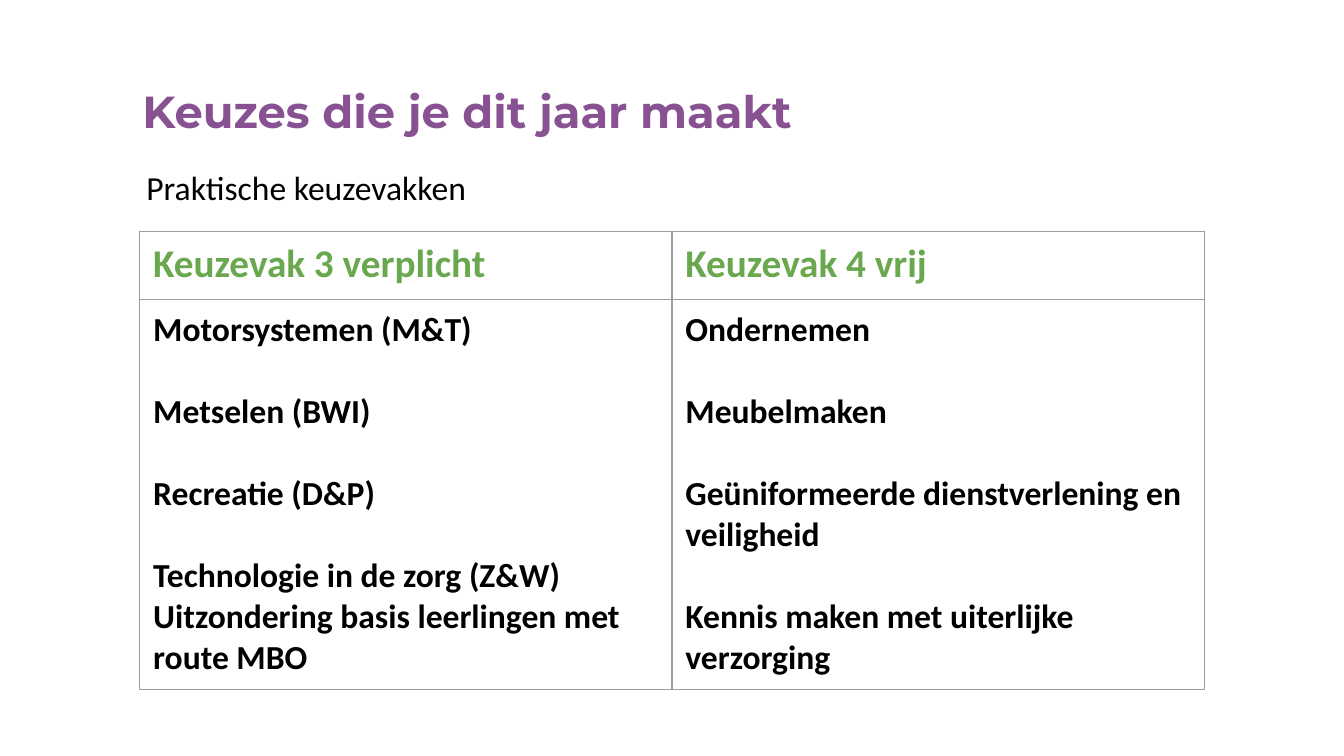
from dataclasses import dataclass

import lxml.etree
import pptx
import pptx.dml.color
import pptx.enum.text
import pptx.oxml.ns
import pptx.util

SLIDE_WIDTH = pptx.util.Inches(10)
SLIDE_HEIGHT = pptx.util.Emu(SLIDE_WIDTH * 9 // 16)
BLANK_LINE = 22


@dataclass(frozen=True)
class Style:
    font: str
    size: float
    color: str
    bold: bool = False


@dataclass(frozen=True)
class Line:
    text: str
    space_before: float = 0


@dataclass(frozen=True)
class Subject:
    heading: str
    options: tuple[Line, ...]


TITLE = Style("Montserrat", 24, "885292", True)
INTRO = Style("Calibri", 18, "000000")
HEADING = Style("Calibri", 21, "6AA84F", True)
OPTION = Style("Calibri", 18, "000000", True)

SUBJECTS = (
    Subject("Keuzevak 3 verplicht", (
        Line("Motorsystemen (M&T)"),
        Line("Metselen (BWI)", BLANK_LINE),
        Line("Recreatie (D&P)", BLANK_LINE),
        Line("Technologie in de zorg (Z&W)", BLANK_LINE),
        Line("Uitzondering basis leerlingen met route MBO"),
    )),
    Subject("Keuzevak 4 vrij", (
        Line("Ondernemen"),
        Line("Meubelmaken", BLANK_LINE),
        Line("Geüniformeerde dienstverlening en veiligheid", BLANK_LINE),
        Line("Kennis maken met uiterlijke verzorging", BLANK_LINE),
    )),
)


def rgb(color: str) -> pptx.dml.color.RGBColor:
    return pptx.dml.color.RGBColor.from_string(color)


def write(frame, lines: tuple[Line, ...], style: Style) -> None:
    frame.text = "\n".join(line.text for line in lines)
    for paragraph, line in zip(frame.paragraphs, lines):
        paragraph.alignment = pptx.enum.text.PP_ALIGN.LEFT
        paragraph.space_before = pptx.util.Pt(line.space_before)
        for run in paragraph.runs:
            run.font.name = style.font
            run.font.size = pptx.util.Pt(style.size)
            run.font.bold = style.bold
            run.font.color.rgb = rgb(style.color)


def place(box, left: float, top: float, width: float, height: float) -> None:
    box.left, box.width = (int(SLIDE_WIDTH * share) for share in (left, width))
    box.top, box.height = (int(SLIDE_HEIGHT * share) for share in (top, height))


def write_box(box, text: str, style: Style) -> None:
    frame = box.text_frame
    write(frame, (Line(text),), style)
    frame.word_wrap = True
    frame.vertical_anchor = pptx.enum.text.MSO_ANCHOR.MIDDLE
    frame.margin_left = frame.margin_right = pptx.util.Inches(0.1)
    frame.margin_top = frame.margin_bottom = pptx.util.Inches(0.1)


def border(cell, color: str, width: float) -> None:
    properties = cell._tc.get_or_add_tcPr()
    for position, side in enumerate(("a:lnL", "a:lnR", "a:lnT", "a:lnB")):
        edge = lxml.etree.Element(pptx.oxml.ns.qn(side), w=str(pptx.util.Pt(width)))
        fill = lxml.etree.SubElement(edge, pptx.oxml.ns.qn("a:solidFill"))
        lxml.etree.SubElement(fill, pptx.oxml.ns.qn("a:srgbClr"), val=color)
        properties.insert(position, edge)


def fill_cell(cell, lines: tuple[Line, ...], style: Style) -> None:
    write(cell.text_frame, lines, style)
    cell.margin_left = cell.margin_right = pptx.util.Inches(0.1)
    cell.margin_top = cell.margin_bottom = pptx.util.Inches(0.07)
    cell.fill.background()
    border(cell, "9E9E9E", 0.75)


def add_subjects(slide, subjects: tuple[Subject, ...]) -> None:
    graphic = slide.shapes.add_table(
        2, len(subjects), pptx.util.Inches(1.04), pptx.util.Inches(1.72),
        pptx.util.Inches(3.96 * len(subjects)), pptx.util.Inches(3.41))
    table = graphic.table
    table.first_row = table.horz_banding = False
    table.rows[0].height = pptx.util.Inches(0.51)
    table.rows[1].height = pptx.util.Inches(2.9)
    for column, subject in enumerate(subjects):
        fill_cell(table.cell(0, column), (Line(subject.heading),), HEADING)
        fill_cell(table.cell(1, column), subject.options, OPTION)


def main() -> None:
    presentation = pptx.Presentation()
    presentation.slide_width = SLIDE_WIDTH
    presentation.slide_height = SLIDE_HEIGHT
    slide = presentation.slides.add_slide(presentation.slide_layouts[5])

    title = slide.shapes.title
    place(title, 0.096, 0.064, 0.83, 0.164)
    write_box(title, "Keuzes die je dit jaar maakt", TITLE)

    intro = slide.shapes.add_textbox(0, 0, 0, 0)
    place(intro, 0.099, 0.202, 0.825, 0.09)
    write_box(intro, "Praktische keuzevakken", INTRO)

    add_subjects(slide, SUBJECTS)
    presentation.save("out.pptx")


if __name__ == "__main__":
    main()
